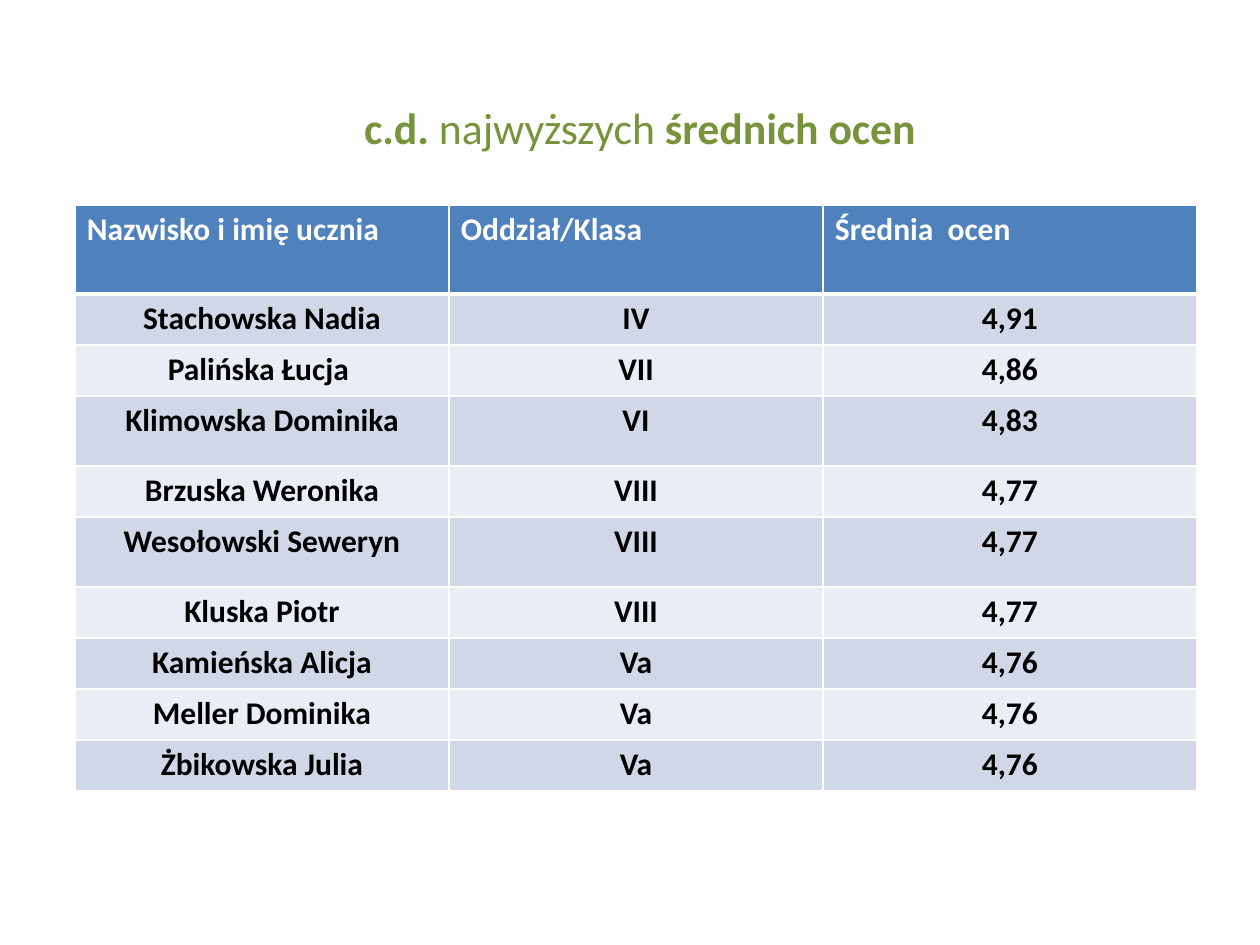
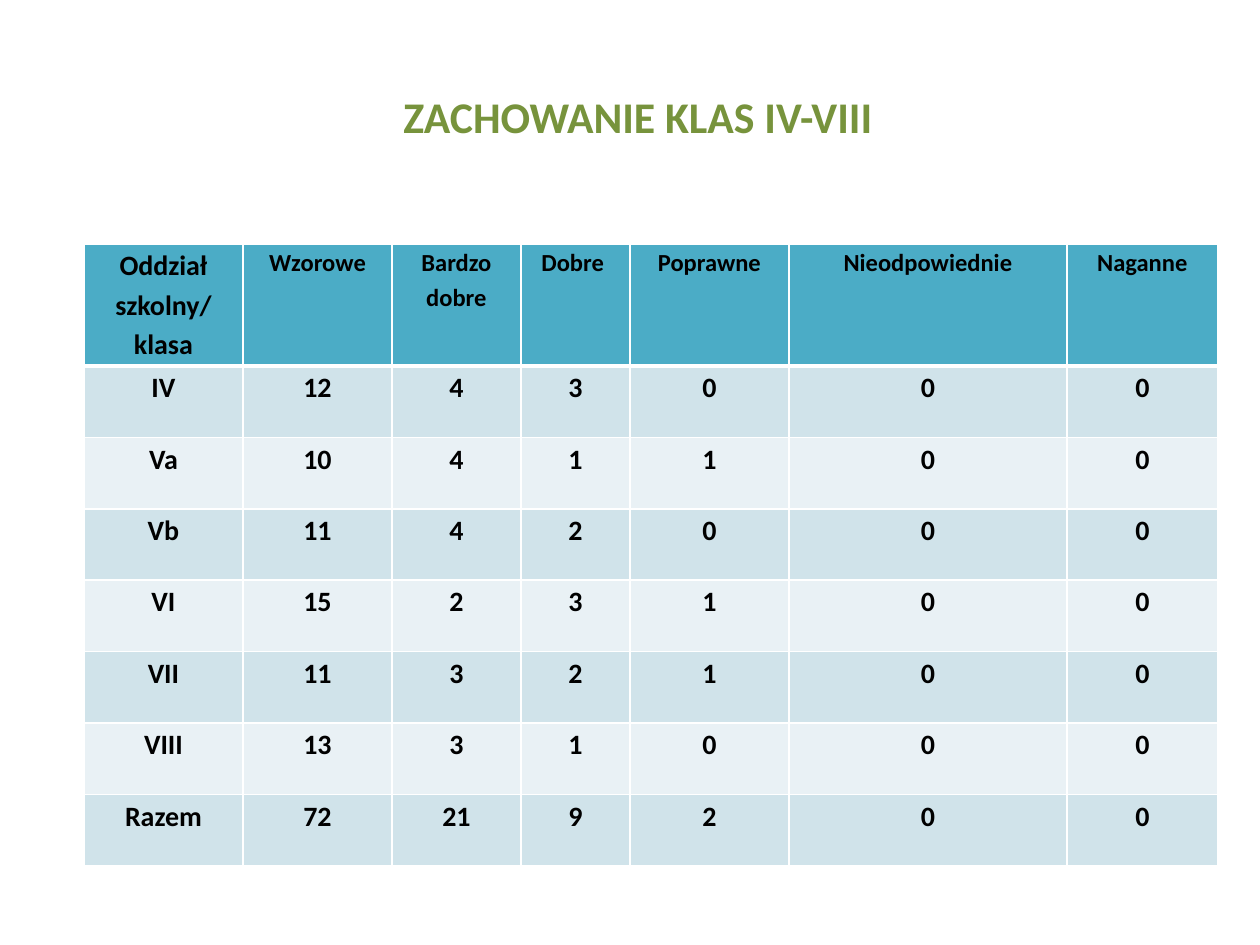
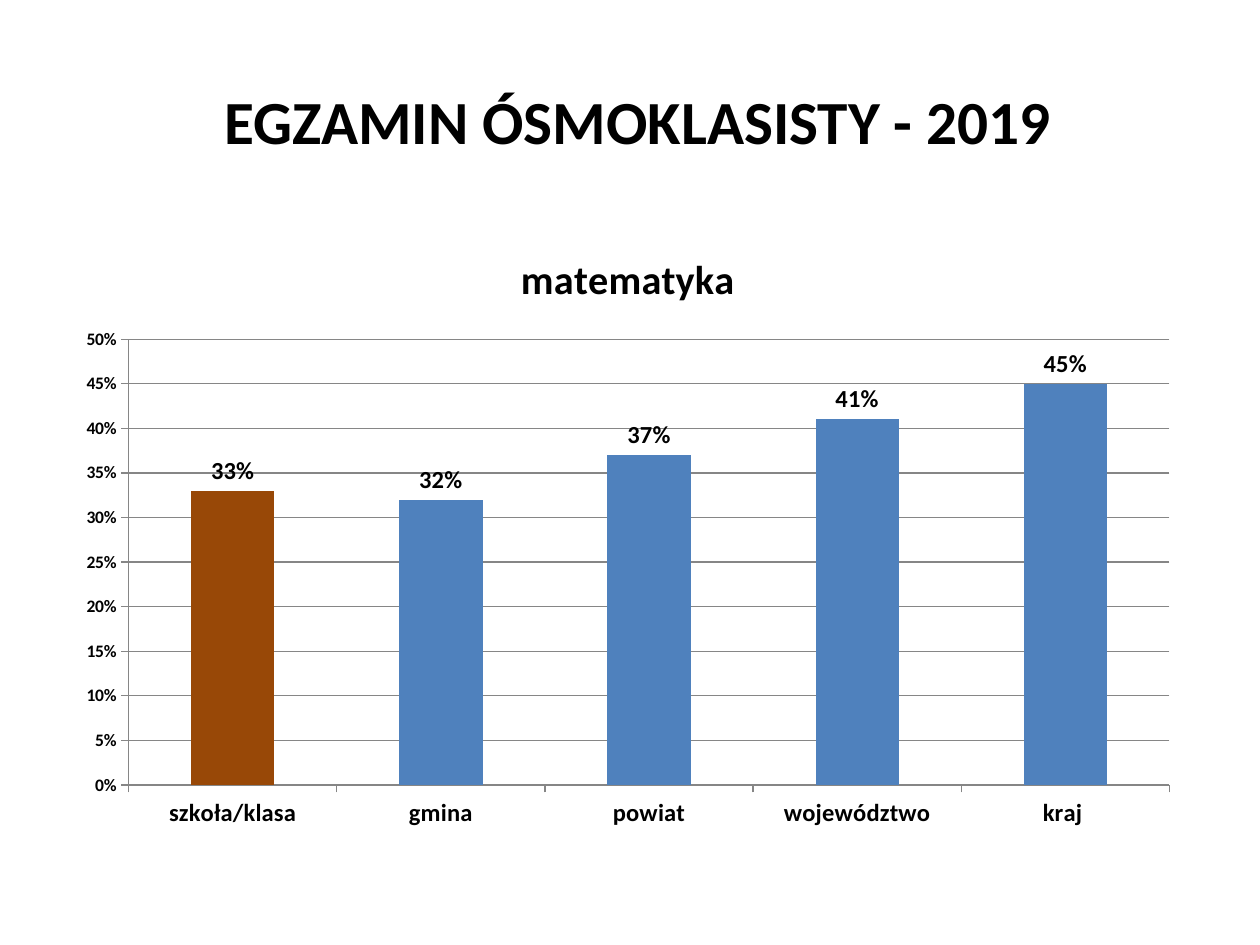
from lxml.etree import SubElement
from pptx import Presentation
from pptx.chart.data import CategoryChartData
from pptx.dml.color import RGBColor
from pptx.enum.chart import XL_CHART_TYPE as ChartType, XL_LABEL_POSITION as LabelPosition
from pptx.enum.chart import XL_TICK_MARK as TickMark
from pptx.enum.text import MSO_ANCHOR as Anchor, PP_ALIGN as Align
from pptx.oxml.ns import qn
from pptx.util import Emu, Pt

COLORS = {
    "black": "000000", "white": "FFFFFF", "green": "77933C",
    "blue": "4F81BD", "blue band": "D0D8E8", "blue pale": "E9EDF4",
    "teal": "4BACC6", "teal band": "D0E3EA", "teal pale": "E9F1F5",
    "brown": "984807", "grid": "868686",
}
FONT = "Calibri"
EMU_PER_PX = 914400 / 126


def px(length):
    return Emu(round(length * EMU_PER_PX))


def color(name):
    return RGBColor.from_string(COLORS[name])


def style_font(font, size=18, ink="black", bold=True):
    font.name, font.size, font.bold = FONT, Pt(size), bold
    font.color.rgb = color(ink)


def add_span(para, text, **style):
    span = para.add_run()
    span.text = text
    style_font(span.font, **style)


class Deck:
    def __init__(self, width, height):
        self.file = Presentation()
        self.file.slide_width, self.file.slide_height = px(width), px(height)
        self.page = None

    def add_page(self):
        self.page = self.file.slides.add_slide(self.file.slide_layouts[6])

    def add_title(self, place, spans):
        box = self.page.shapes.add_textbox(*map(px, place))
        frame = box.text_frame
        frame.word_wrap = True
        frame.vertical_anchor = Anchor.MIDDLE
        para = frame.paragraphs[0]
        para.alignment = Align.CENTER
        for text, style in spans:
            add_span(para, text, **style)

    def add_table(self, left, top, widths, heights, rows, theme, margins, cell_style):
        place = map(px, (left, top, sum(widths), sum(heights)))
        table = self.page.shapes.add_table(len(rows), len(widths), *place).table
        for column, width in zip(table.columns, widths):
            column.width = px(width)
        for row_index, (row, height) in enumerate(zip(rows, heights)):
            table.rows[row_index].height = px(height)
            shade = theme if row_index == 0 else f"{theme} {'band' if row_index % 2 else 'pale'}"
            for column_index, text in enumerate(row):
                cell = table.cell(row_index, column_index)
                cell.margin_left = cell.margin_right = px(margins[0])
                cell.margin_top = cell.margin_bottom = px(margins[1])
                self.add_borders(cell, row_index)
                cell.fill.solid()
                cell.fill.fore_color.rgb = color(shade)
                self.fill_cell(cell, text, **cell_style(row_index, column_index))

    def fill_cell(self, cell, text, align=Align.CENTER, spacing=1.0, **style):
        for index, line in enumerate(text.split("\n")):
            frame = cell.text_frame
            para = frame.add_paragraph() if index else frame.paragraphs[0]
            para.alignment, para.line_spacing = align, spacing
            add_span(para, line, **style)

    def add_borders(self, cell, row_index):
        widths = {"L": 1, "R": 1, "T": 3 if row_index == 1 else 1, "B": 1 if row_index else 3}
        properties = cell._tc.get_or_add_tcPr()
        for side, width in widths.items():
            line = SubElement(properties, qn(f"a:ln{side}"), w=str(Pt(width)))
            fill = SubElement(line, qn("a:solidFill"))
            SubElement(fill, qn("a:srgbClr"), val=COLORS["white"])

    def add_column_chart(self, place, title, values, highlight):
        data = CategoryChartData(number_format="0%")
        data.categories = list(values)
        data.add_series(title, list(values.values()))
        chart = self.page.shapes.add_chart(ChartType.COLUMN_CLUSTERED, *map(px, place), data).chart
        style_font(chart.font, size=10, bold=False)
        chart.has_legend = False
        chart.has_title = True
        add_span(chart.chart_title.text_frame.paragraphs[0], title, size=23)
        chart.chart_title.include_in_layout = False

        plot = chart.plots[0]
        plot.gap_width = 150
        plot.vary_by_categories = False
        series = plot.series[0]
        series.invert_if_negative = False
        for target, shade in ((series, "blue"), (series.points[highlight], "brown")):
            target.format.fill.solid()
            target.format.fill.fore_color.rgb = color(shade)

        plot.has_data_labels = True
        labels = plot.data_labels
        labels.show_value = True
        labels.position = LabelPosition.OUTSIDE_END
        labels.number_format, labels.number_format_is_linked = "0%", False
        style_font(labels.font, size=14)

        scale = chart.value_axis
        scale.minimum_scale, scale.maximum_scale, scale.major_unit = 0, 0.5, 0.05
        scale.tick_labels.number_format = "0%"
        scale.tick_labels.number_format_is_linked = False
        scale.has_major_gridlines = True
        for axis, size in ((chart.category_axis, 14), (scale, 10)):
            axis.major_tick_mark = TickMark.OUTSIDE
            style_font(axis.tick_labels.font, size=size)
            self.style_line(axis.format.line)
        self.style_line(scale.major_gridlines.format.line)

    def style_line(self, line):
        line.color.rgb = color("grid")
        line.width = Pt(0.75)


def add_averages(deck):
    deck.add_page()
    green = {"size": 25, "ink": "green"}
    deck.add_title((69, 76, 1128, 89), [
        (" ", {"size": 35, "ink": "green"}),
        ("c.d. ", green),
        ("najwyższych", {**green, "bold": False}),
        (" średnich ocen", green),
    ])
    rows = [
        ("Nazwisko i imię ucznia", "Oddział/Klasa", "Średnia  ocen"),
        ("Stachowska Nadia", "IV", "4,91"),
        ("Palińska Łucja ", "VII", "4,86"),
        ("Klimowska Dominika", "VI", "4,83"),
        ("Brzuska Weronika", "VIII", "4,77"),
        ("Wesołowski Seweryn", "VIII", "4,77"),
        ("Kluska Piotr", "VIII", "4,77"),
        ("Kamieńska Alicja", "Va", "4,76"),
        ("Meller Dominika", "Va", "4,76"),
        ("Żbikowska Julia", "Va", "4,76"),
    ]
    tall_rows = {0: 89, 3: 70, 5: 70}
    heights = [tall_rows.get(index, 51) for index in range(len(rows))]

    def cell_style(row, column):
        return {} if row else {"align": Align.LEFT, "ink": "white"}

    deck.add_table(75, 205, [374] * 3, heights, rows, "blue", (12, 6), cell_style)


def add_behaviour(deck):
    deck.add_page()
    deck.add_title((64, 45, 1134, 129), [
        (" ", {"size": 35}),
        ("ZACHOWANIE KLAS IV-VIII", {"size": 25, "ink": "green"}),
    ])
    grades = {
        "IV": (12, 4, 3, 0, 0, 0),
        "Va": (10, 4, 1, 1, 0, 0),
        "Vb": (11, 4, 2, 0, 0, 0),
        "VI": (15, 2, 3, 1, 0, 0),
        "VII": (11, 3, 2, 1, 0, 0),
        "VIII": (13, 3, 1, 0, 0, 0),
        "Razem": (72, 21, 9, 2, 0, 0),
    }
    header = ("Oddział szkolny/\nklasa", "Wzorowe", "Bardzo dobre", "Dobre ",
              "Poprawne", "Nieodpowiednie", "Naganne")
    rows = [header] + [(group, *map(str, counts)) for group, counts in grades.items()]
    widths = [159, 149, 129, 109, 159, 278, 151]
    heights = [122] + [500 / len(grades)] * len(grades)

    def cell_style(row, column):
        return {"size": 14 if row == 0 and column else 16, "spacing": 1.15}

    deck.add_table(84, 244, widths, heights, rows, "teal", (9, 0), cell_style)


def add_exam(deck):
    deck.add_page()
    deck.add_title((74, 76, 1128, 89), [("EGZAMIN ÓSMOKLASISTY - 2019", {"size": 35})])
    results = {"szkoła/klasa": 0.33, "gmina": 0.32, "powiat": 0.37, "województwo": 0.41, "kraj ": 0.45}
    deck.add_column_chart((64, 224, 1128, 616), "matematyka", results, highlight=0)


def main():
    deck = Deck(1260, 945)
    add_averages(deck)
    add_behaviour(deck)
    add_exam(deck)
    deck.file.save("out.pptx")


if __name__ == "__main__":
    main()
